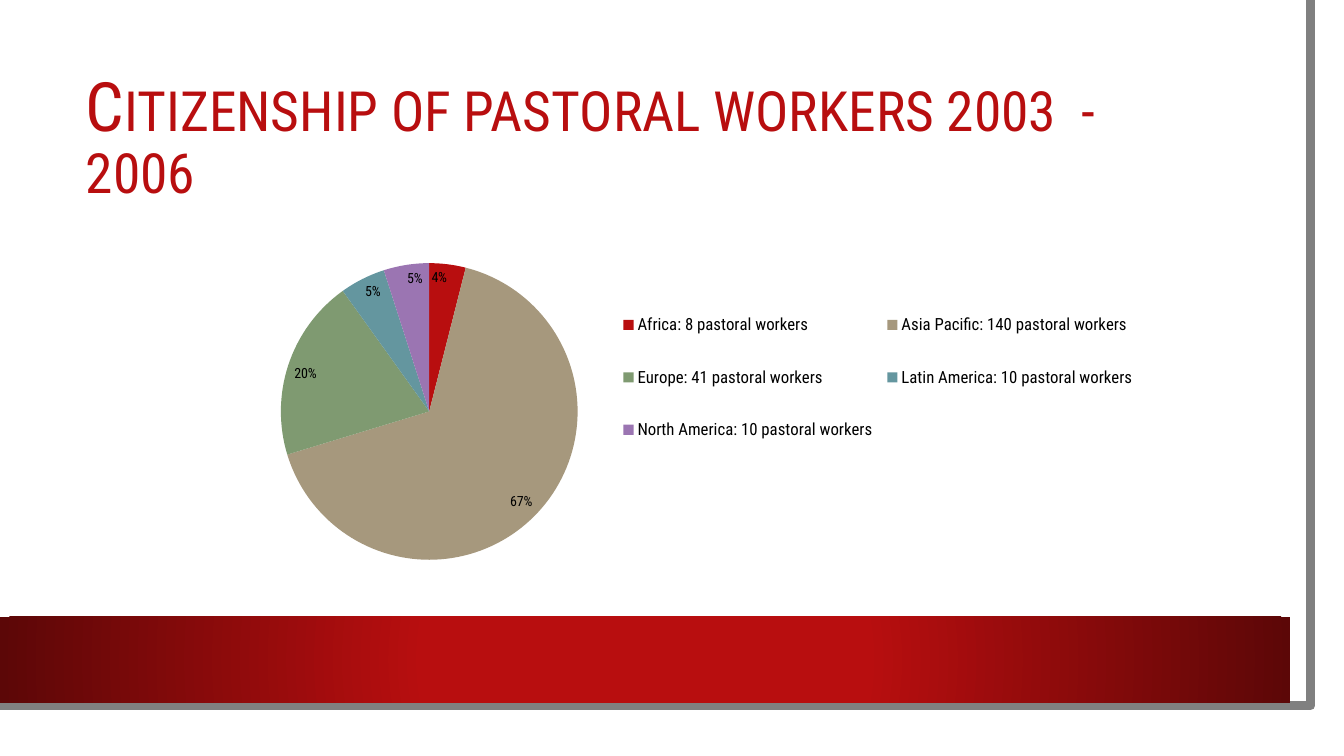
from lxml import etree
from pptx import Presentation, util as u
from pptx.chart.data import CategoryChartData
from pptx.dml.color import RGBColor
from pptx.enum import chart as charts, shapes, text
from pptx.oxml import parse_xml

WIDTH, HEIGHT = 13.33, 7.5
MARGIN, CONTENT_WIDTH = 0.75, 11.37
FONT, RED, DARK_RED = "Roboto Condensed", "B80E0F", "5C0707"
TITLE = [("C", 48.6), ("ITIZENSHIP OF PASTORAL WORKERS 2003  - 2006", 39.6)]
REGIONS = [
    ("Africa: 8 pastoral workers", 4, RED),
    ("Asia Pacific: 140 pastoral workers", 67, "A6987D"),
    ("Europe: 41 pastoral workers", 20, "7F9A71"),
    ("Latin America: 10 pastoral workers", 5, "64969F"),
    ("North America: 10 pastoral workers", 5, "9B75B2"),
]
EDGE = [(12.82, 0), (12.85, 7.02), (-0.03, 7.01)]
PLOT_AREA = {"x": 0.104, "y": 0.097, "w": 0.409, "h": 0.813}
LEGEND_AREA = {"x": 0.47, "y": 0.15, "w": 0.46, "h": 0.52}
A_NS = "http://schemas.openxmlformats.org/drawingml/2006/main"
C_NS = "http://schemas.openxmlformats.org/drawingml/2006/chart"


def color(value):
    """Turn a hex string into a colour."""
    return RGBColor.from_string(value)


def style_font(font, size, hex_color="000000"):
    """Set the typeface, size and colour of a font."""
    font.name, font.size = FONT, u.Pt(size)
    font.color.rgb = color(hex_color)


def add_block(page, left, top, width, height, fill):
    """Add a plain rectangle without outline or shadow."""
    block = page.shapes.add_shape(
        shapes.MSO_SHAPE.RECTANGLE, *map(u.Inches, (left, top, width, height)))
    block.shadow.inherit = False
    block.fill.solid()
    block.fill.fore_color.rgb = color(fill)
    block.line.fill.background()
    return block


def add_glow(block, inner, outer):
    """Replace a solid fill by a gradient that darkens from the centre."""
    gradient = parse_xml(
        f'<a:gradFill xmlns:a="{A_NS}" rotWithShape="1"><a:gsLst>'
        f'<a:gs pos="34000"><a:srgbClr val="{inner}"/></a:gs>'
        f'<a:gs pos="100000"><a:srgbClr val="{outer}"/></a:gs></a:gsLst>'
        '<a:path path="circle"><a:fillToRect l="50000" t="50000" r="50000" b="50000"/>'
        '</a:path></a:gradFill>')
    solid = block._element.spPr.find(f"{{{A_NS}}}solidFill")
    solid.getparent().replace(solid, gradient)


def add_edge(page):
    """Draw the grey edge along the right and bottom of the sheet."""
    builder = page.shapes.build_freeform(*EDGE[0], scale=u.Inches(1))
    builder.add_line_segments(EDGE[1:], close=False)
    edge = builder.convert_to_shape()
    edge.shadow.inherit = False
    edge.fill.background()
    edge.line.color.rgb = color("808080")
    edge.line.width = u.Pt(6.5)


def fill_title(page):
    """Place the title above the sheet and write it in small capitals style."""
    title = page.shapes.title
    page.shapes._spTree.append(title._element)
    title.left, title.top = u.Inches(MARGIN), u.Inches(MARGIN)
    title.width, title.height = u.Inches(CONTENT_WIDTH), u.Inches(1.26)
    frame = title.text_frame
    frame.word_wrap = True
    frame.auto_size = text.MSO_AUTO_SIZE.NONE
    frame.vertical_anchor = text.MSO_ANCHOR.MIDDLE
    para = frame.paragraphs[0]
    para.alignment = text.PP_ALIGN.LEFT
    para.line_spacing = 0.9
    for words, size in TITLE:
        span = para.add_run()
        span.text = words
        style_font(span.font, size, RED)


def set_layout(element, area, inner=False):
    """Give a plot area or a legend a fixed place within its chart."""
    for old in element.findall(f"{{{C_NS}}}layout"):
        element.remove(old)
    layout = etree.Element(f"{{{C_NS}}}layout")
    manual = etree.SubElement(layout, f"{{{C_NS}}}manualLayout")
    settings = [("layoutTarget", "inner")] if inner else []
    settings += [("xMode", "edge"), ("yMode", "edge"), *area.items()]
    for name, value in settings:
        etree.SubElement(manual, f"{{{C_NS}}}{name}", val=str(value))
    element.insert(0 if inner else 1, layout)


def add_pie(page):
    """Add the pie of regions with its legend."""
    data = CategoryChartData(number_format='0"%"')
    data.categories = [name for name, _, _ in REGIONS]
    data.add_series("Series 1", [share for _, share, _ in REGIONS])
    chart = page.shapes.add_chart(
        charts.XL_CHART_TYPE.PIE,
        *map(u.Inches, (MARGIN, 2.26, CONTENT_WIDTH, 3.62)), data).chart
    chart.has_title = False
    style_font(chart.font, 10)
    plot = chart.plots[0]
    plot.vary_by_categories = True
    for index, (_, _, fill) in enumerate(REGIONS):
        slice_fill = plot.series[0].points[index].format.fill
        slice_fill.solid()
        slice_fill.fore_color.rgb = color(fill)
    plot.has_data_labels = True
    labels = plot.data_labels
    labels.show_value, labels.show_percentage = True, False
    labels.number_format, labels.number_format_is_linked = '0"%"', False
    labels.position = charts.XL_LABEL_POSITION.INSIDE_END
    style_font(labels.font, 10)
    chart.has_legend = True
    chart.legend.position = charts.XL_LEGEND_POSITION.RIGHT
    chart.legend.include_in_layout = False
    style_font(chart.legend.font, 12)
    set_layout(chart._chartSpace.chart.plotArea, PLOT_AREA, inner=True)
    set_layout(chart.legend._element, LEGEND_AREA)


def main():
    """Build the slide and save it."""
    deck = Presentation()
    deck.slide_width, deck.slide_height = u.Inches(WIDTH), u.Inches(HEIGHT)
    page = deck.slides.add_slide(deck.slide_layouts[5])
    add_block(page, 0, 0, 13.1, 7.27, "FFFFFF")
    add_edge(page)
    add_glow(add_block(page, 0, 6.12, 12.8, 0.85, RED), RED, DARK_RED)
    fill_title(page)
    add_pie(page)
    deck.save("out.pptx")


if __name__ == "__main__":
    main()
